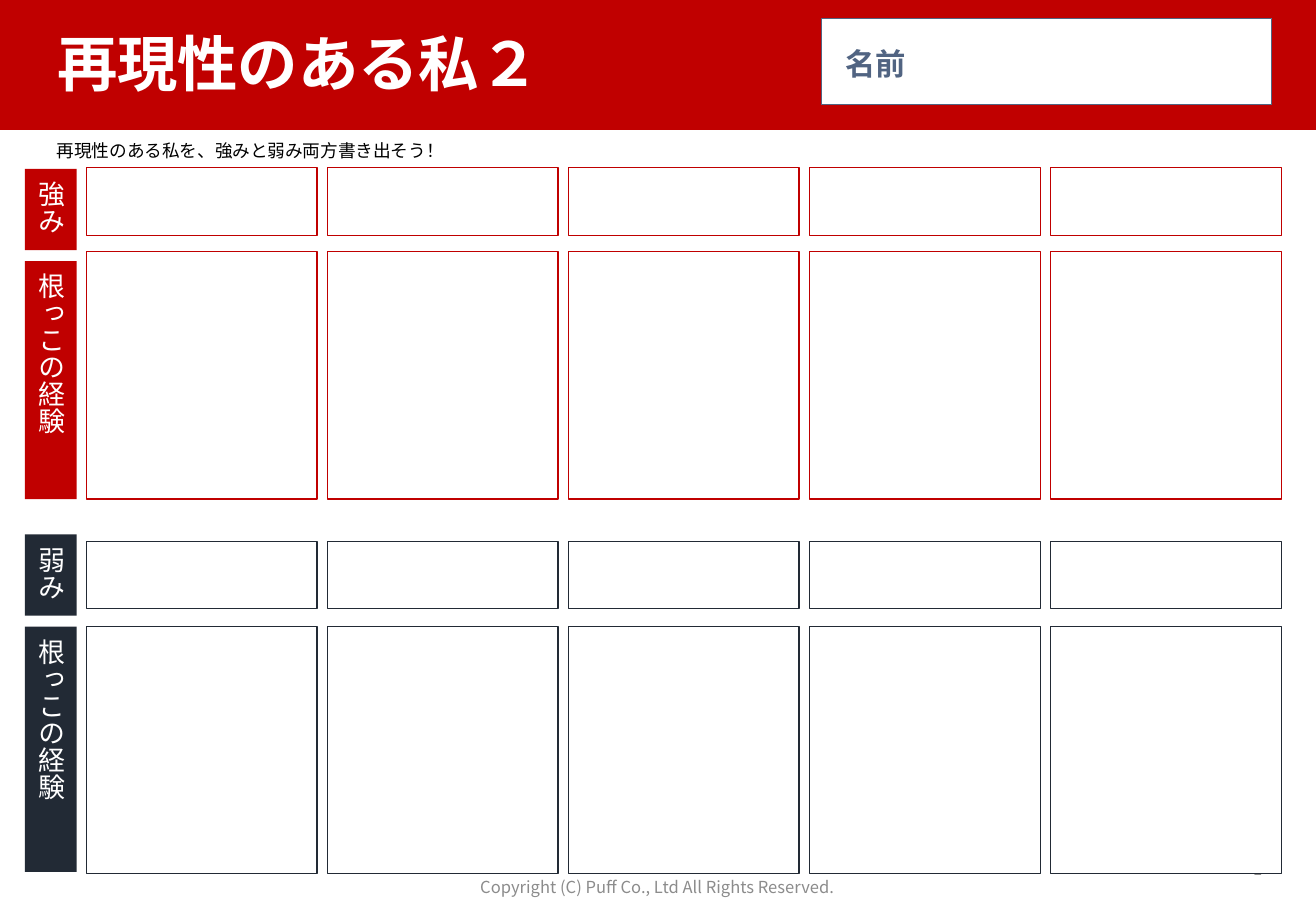
from lxml import etree
from pptx import Presentation
from pptx import util as u
from pptx.dml.color import RGBColor
from pptx.enum import shapes, text
from pptx.oxml.ns import qn

RED = RGBColor(0xC0, 0x00, 0x00)
NAVY = RGBColor(0x22, 0x2A, 0x35)
SLATE = RGBColor(0x51, 0x64, 0x82)
GRAY = RGBColor(0x8C, 0x8C, 0x8C)
WHITE = RGBColor(0xFF, 0xFF, 0xFF)
BLACK = RGBColor(0x00, 0x00, 0x00)

LEFT, CENTER, RIGHT = text.PP_ALIGN.LEFT, text.PP_ALIGN.CENTER, text.PP_ALIGN.RIGHT
COLUMNS = 5
COLUMN_LEFT, COLUMN_PITCH, COLUMN_WIDTH = 51.1, 142.9, 136.8
LABEL_LEFT, LABEL_WIDTH = 14.8, 30.6


class Worksheet:
    font_name = "Noto Sans CJK JP"

    def __init__(self, presentation):
        layout = presentation.slide_layouts[5]
        self.slide = presentation.slides.add_slide(layout)

    def set_words(self, shape, words, size, color, align=LEFT, bold=False,
                  anchor=text.MSO_ANCHOR.MIDDLE, wrap=True, spacing=1.0):
        frame = shape.text_frame
        frame.auto_size = text.MSO_AUTO_SIZE.NONE
        frame.word_wrap = wrap
        frame.vertical_anchor = anchor
        paragraph = frame.paragraphs[0]
        paragraph.alignment = align
        paragraph.line_spacing = spacing
        run = paragraph.add_run()
        run.text = words
        run.font.name = self.font_name
        run.font.size = u.Pt(size)
        run.font.bold = bold
        run.font.color.rgb = color
        east_asian = etree.SubElement(run.font._element, qn("a:ea"))
        east_asian.set("typeface", self.font_name)

    def title(self, words, left, top, width, height):
        shape = self.slide.shapes.title
        shape.left, shape.top = u.Pt(left), u.Pt(top)
        shape.width, shape.height = u.Pt(width), u.Pt(height)
        self.set_words(shape, words, 35.8, WHITE, bold=True, spacing=0.9)

    def box(self, left, top, width, height, fill, line=None):
        shape = self.slide.shapes.add_shape(
            shapes.MSO_SHAPE.RECTANGLE,
            u.Pt(left), u.Pt(top), u.Pt(width), u.Pt(height))
        shape.shadow.inherit = False
        shape.fill.solid()
        shape.fill.fore_color.rgb = fill
        if line is None:
            shape.line.fill.background()
        else:
            shape.line.color.rgb = line
            shape.line.width = u.Pt(0.75)
        return shape

    def band(self, width, height, fill):
        shape = self.box(0, 0, width, height, fill)
        self.slide.shapes._spTree.insert(2, shape._element)

    def name_field(self, words, left, top, width, height):
        shape = self.box(left, top, width, height, WHITE, SLATE)
        frame = shape.text_frame
        frame.margin_left = frame.margin_right = u.Pt(14.4)
        frame.margin_top = frame.margin_bottom = u.Pt(14.4)
        self.set_words(shape, words, 18, SLATE, bold=True, spacing=1.1)

    def note(self, words, left, top, width, height, size, color, **style):
        shape = self.slide.shapes.add_textbox(
            u.Pt(left), u.Pt(top), u.Pt(width), u.Pt(height))
        self.set_words(shape, words, size, color, **style)

    def answer_row(self, top, height, color):
        for column in range(COLUMNS):
            left = COLUMN_LEFT + column * COLUMN_PITCH
            self.box(left, top, COLUMN_WIDTH, height, WHITE, color)

    def vertical_label(self, words, top, height, fill):
        shape = self.box(LABEL_LEFT, top, LABEL_WIDTH, height, fill)
        self.set_words(shape, words, 16, WHITE, align=CENTER)
        shape.text_frame._txBody.bodyPr.set("vert", "eaVert")


def main():
    presentation = Presentation()
    presentation.slide_width = u.Pt(780)
    presentation.slide_height = u.Pt(540)

    sheet = Worksheet(presentation)
    sheet.band(780, 77, RED)
    sheet.title("再現性のある私２", 26.6, 0, 726.5, 79.2)
    sheet.note("Copyright (C) Puff Co., Ltd All Rights Reserved.",
               257.8, 511.2, 263.5, 28.8, 9.8, GRAY, align=CENTER)
    sheet.note("1", 579.6, 500.4, 175.7, 28.8, 9.8, GRAY, align=RIGHT)
    sheet.name_field("名前", 486.7, 10.8, 267.1, 51.1)
    sheet.note("再現性のある私を、強みと弱み両方書き出そう！",
               26.6, 79.2, 72, 72, 10.5, BLACK,
               anchor=text.MSO_ANCHOR.TOP, wrap=False)

    rows = [
        ("強み", RED, 100.1, 48.2, 99.4, 40.3),
        ("根っこの経験", RED, 154.8, 141.1, 149, 146.9),
        ("弱み", NAVY, 316.8, 48.2, 321.1, 39.6),
        ("根っこの経験", NAVY, 371.5, 145.4, 371.5, 146.2),
    ]
    for words, color, label_top, label_height, top, height in rows:
        sheet.answer_row(top, height, color)
        sheet.vertical_label(words, label_top, label_height, color)

    presentation.save("out.pptx")


if __name__ == "__main__":
    main()
